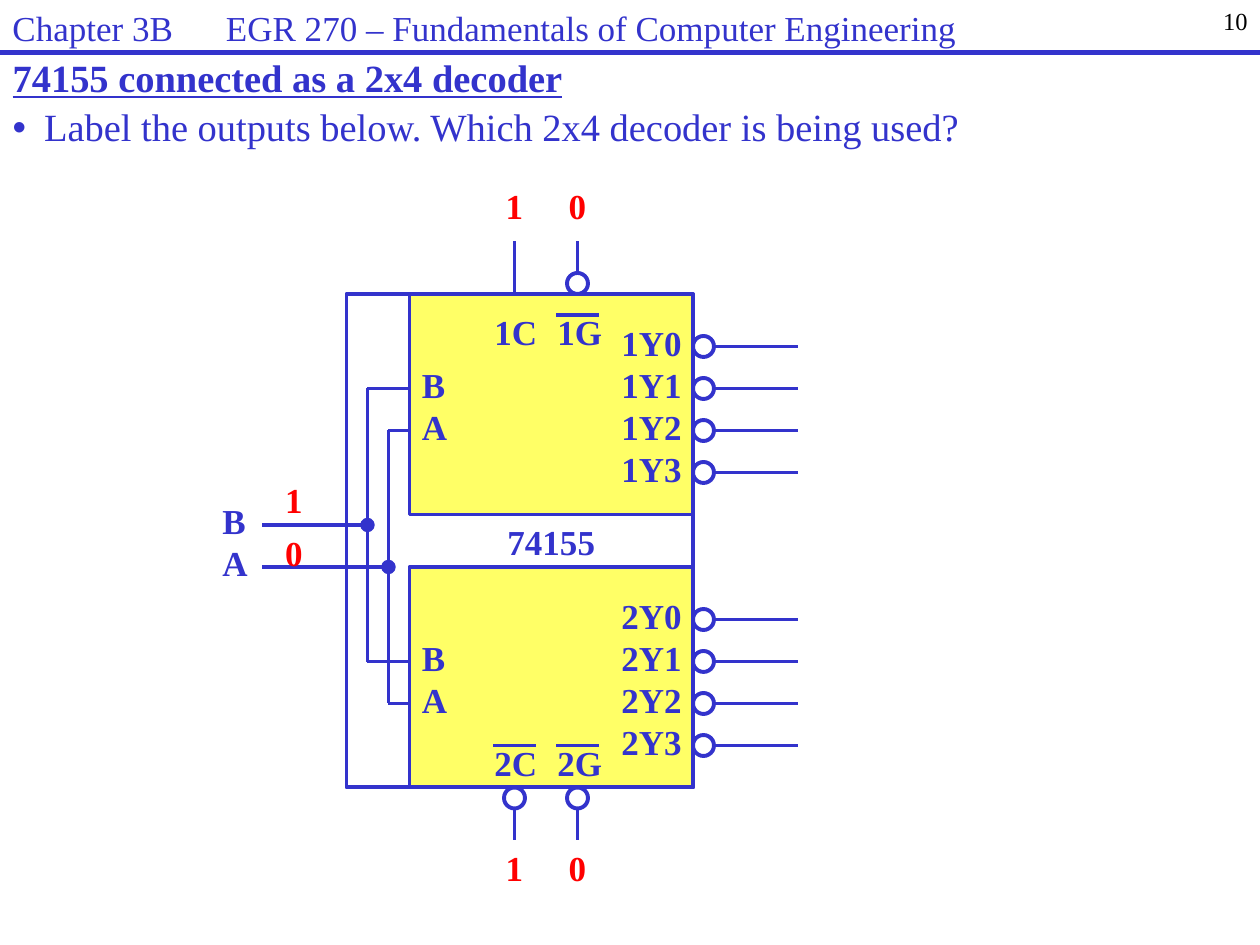
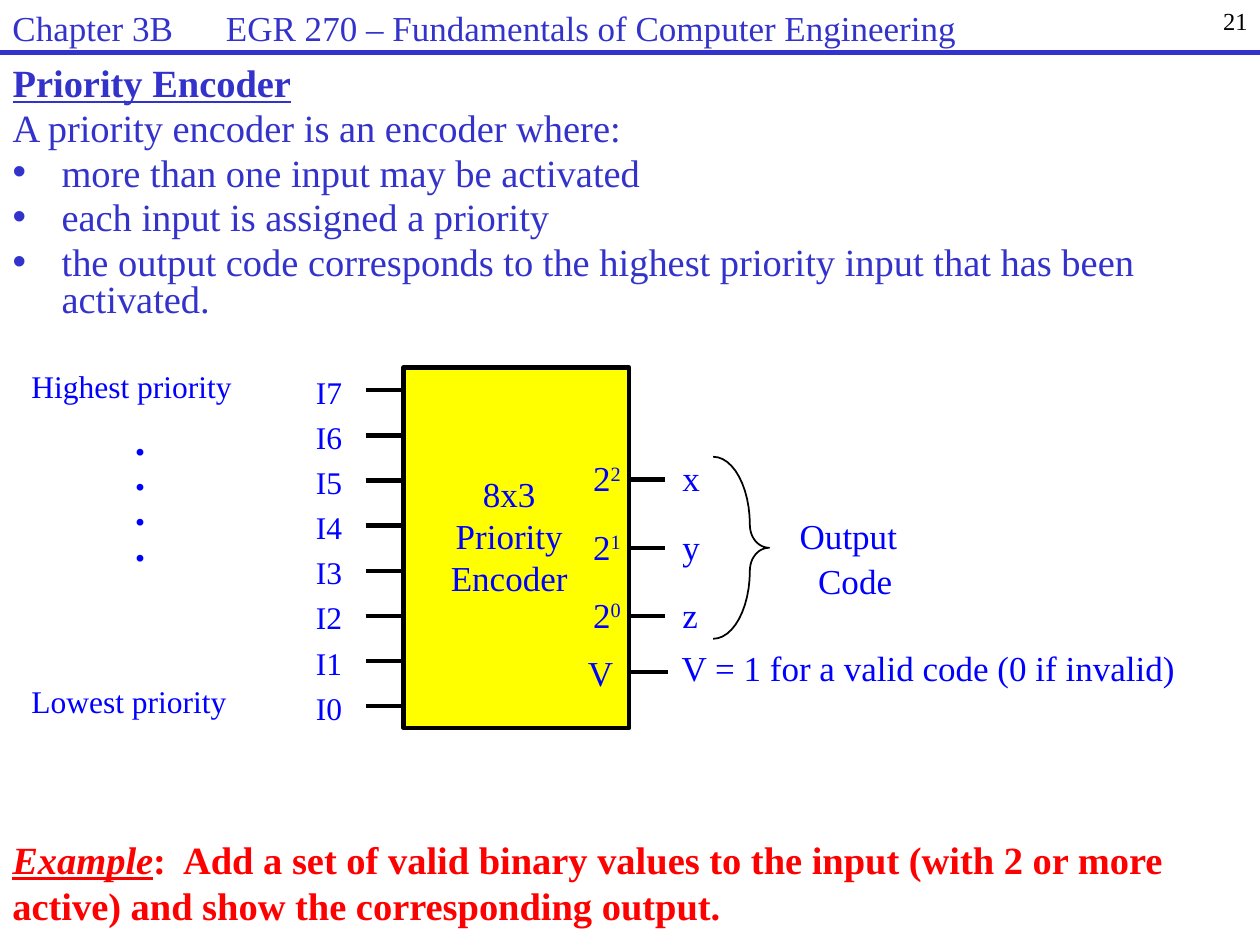
import math
import lxml.etree
import pptx
import pptx.dml.color
import pptx.enum.shapes
import pptx.enum.text
import pptx.oxml.ns
import pptx.util

Pt = pptx.util.Pt
KIND = pptx.enum.shapes.MSO_SHAPE
ALIGN = pptx.enum.text.PP_ALIGN
qn = pptx.oxml.ns.qn

FONT = "Times New Roman"
HUES = {"ink": "3333CC", "blue": "0000FF", "red": "FF0000", "black": "000000",
        "pale": "FFFF66", "gold": "FFFF00"}
HEAD = "Chapter 3B\tEGR 270 – Fundamentals of Computer Engineering"

# Pages: number, title, title line spacing, body top, body line spacing,
# hanging indent, and body lines as (bulleted, text)
DECODER = (10, "74155 connected as a 2x4 decoder", 0.9, 58.4, 0.9, 18,
           [(True, "Label the outputs below. Which 2x4 decoder is being used?")])
ENCODER = (21, "Priority Encoder", 1.0, 61, 0.8, 28,
           [(False, "A priority encoder is an encoder where:"),
            (True, "more than one input may be activated"),
            (True, "each input is assigned a priority"),
            (True, "the output code corresponds to the highest priority input "
                   "that has been activated.")])

# Decoder halves: number, top, top of control labels, barred controls
HALVES = [(1, 168, 174, "G"), (2, 324, 420, "CG")]
PINS = {"C": 294, "G": 330}
# Select inputs: name, spine x, input y, pin offset in each half, value, value top
INPUTS = [("B", 210, 300, 54, "1", 270), ("A", 222, 324, 78, "0", 300)]
# Control values: text, centre x, top
VALUES = [(v, x, y) for y in (102, 480) for v, x in zip("10", PINS.values())]

# Encoder outputs: power of two, name
OUTPUTS = [("2", "x"), ("1", "y"), ("0", "z")]
# Encoder captions: text, x, y, width, size
NOTES = [("Highest priority", 18, 210, 149, 18),
         ("Lowest priority", 18, 389.5, 149, 18),
         ("Output", 457, 294, 80, 20),
         ("Code", 467.5, 319.5, 70, 20),
         ("V", 336, 372, 22, 20),
         ("V = 1 for a valid code (0 if invalid)", 389.5, 369.5, 315, 20)]
TASK = ("Example", ":  Add a set of valid binary values to the input (with 2 or more "
        "active) and show the corresponding output.")


def tint(hue):
    return pptx.dml.color.RGBColor.from_string(HUES[hue])


def style(para, size, hue, bold=False, align=ALIGN.LEFT):
    para.alignment = align
    for run in para.runs:
        font = run.font
        font.name, font.size, font.bold = FONT, Pt(size), bold
        font.color.rgb = tint(hue)


def text(slide, words, x, y, w, h, size=20, hue="ink", bold=True,
         align=ALIGN.LEFT, inset=True):
    """Add a text box, one paragraph for each line of words."""
    frame = slide.shapes.add_textbox(Pt(x), Pt(y), Pt(w), Pt(h)).text_frame
    frame.word_wrap = True
    if not inset:
        frame.margin_left = frame.margin_right = 0
        frame.margin_top = frame.margin_bottom = 0
    frame.text = words
    for para in frame.paragraphs:
        style(para, size, hue, bold, align)
    return frame


def label(slide, words, x, y, w, size=20, align=ALIGN.LEFT):
    """Add a plain blue text box without insets."""
    return text(slide, words, x, y, w, size * 1.2, size, "blue", False, align, False)


def line(slide, x1, y1, x2, y2, hue="ink", width=2.25):
    link = slide.shapes.add_connector(pptx.enum.shapes.MSO_CONNECTOR.STRAIGHT,
                                      Pt(x1), Pt(y1), Pt(x2), Pt(y2))
    link.line.color.rgb = tint(hue)
    link.line.width = Pt(width)
    lxml.etree.SubElement(link._element.spPr, qn("a:effectLst"))
    return link


def paint(shape, fill=None, hue="ink", width=2.25):
    shape.shadow.inherit = False
    if fill:
        shape.fill.solid()
        shape.fill.fore_color.rgb = tint(fill)
    else:
        shape.fill.background()
    shape.line.color.rgb = tint(hue)
    shape.line.width = Pt(width)


def block(slide, x, y, w, h, *look):
    box = slide.shapes.add_shape(KIND.RECTANGLE, Pt(x), Pt(y), Pt(w), Pt(h))
    paint(box, *look)
    return box


def ring(slide, x, y, size=12, fill=None):
    """Add a circle centred on x, y."""
    dot = slide.shapes.add_shape(KIND.OVAL, Pt(x - size / 2), Pt(y - size / 2),
                                 Pt(size), Pt(size))
    paint(dot, fill)


def place(holder, x, y, w, h):
    holder.left, holder.top, holder.width, holder.height = Pt(x), Pt(y), Pt(w), Pt(h)
    frame = holder.text_frame
    frame.auto_size = pptx.enum.text.MSO_AUTO_SIZE.NONE
    frame.vertical_anchor = pptx.enum.text.MSO_ANCHOR.TOP
    frame.word_wrap = True
    return frame


def page(deck, number, title, lead, top, space, hang, items):
    """Add a slide with its running head, title and body list."""
    slide = deck.slides.add_slide(deck.slide_layouts[1])
    frame = place(slide.shapes.title, 0, 30.25, 720, 34)
    frame.text = title
    para = frame.paragraphs[0]
    style(para, 22, "ink", True)
    para.line_spacing = lead
    para.runs[0].font.underline = True

    frame = place(slide.placeholders[1], 0, top, 720, 26 * len(items) + 30)
    frame.text = "\n".join(words for _, words in items)
    for para, (dotted, _) in zip(frame.paragraphs, items):
        style(para, 22, "ink")
        para.line_spacing = space
        para.space_before, para.space_after = Pt(0), Pt(4.4)
        props = para._p.get_or_add_pPr()
        edge = hang if dotted else 0
        props.set("marL", str(Pt(edge)))
        props.set("indent", str(-Pt(edge)))
        if not dotted:
            lxml.etree.SubElement(props, qn("a:buNone"))

    head = text(slide, HEAD, 0, 0, 666, 30, bold=False)
    tabs = lxml.etree.SubElement(head.paragraphs[0]._p.get_or_add_pPr(), qn("a:tabLst"))
    lxml.etree.SubElement(tabs, qn("a:tab"), pos=str(Pt(122)), algn="l")
    text(slide, str(number), 672, 0, 48, 30, 14, "black", False, ALIGN.RIGHT)
    line(slide, 0, 30, 720, 30, width=3)
    return slide


def half(slide, num, top, ctrl, barred):
    """Draw one 2x4 decoder of the chip with its pins."""
    left, right, high = 234, 396, 126
    block(slide, left, top, right - left, high, "pale")
    for i in range(4):
        y = top + 30 + 24 * i
        ring(slide, right + 6, y)
        line(slide, right + 12, y, 456, y)
    text(slide, "\n".join(f"{num}Y{i}" for i in range(4)), 348, top + 12, 52, 104)
    text(slide, "B\nA", left, top + 36, 30, 55)
    way, edge = (-1, top) if num == 1 else (1, top + high)
    for name, x in PINS.items():
        text(slide, f"{num}{name}", x - 18.5, ctrl, 42, 32)
        start = edge
        if name in barred:
            line(slide, x - 12, ctrl + 6, x + 12, ctrl + 6)
            ring(slide, x, edge + way * 6)
            start = edge + way * 12
        line(slide, x, start, x, edge + way * 30)


def decoder(deck):
    slide = page(deck, *DECODER)
    block(slide, 198, 168, 198, 282)
    for part in HALVES:
        half(slide, *part)
    for name, x, y, drop, value, high in INPUTS:
        line(slide, 150, y, x, y)
        ends = [top + drop for _, top, _, _ in HALVES]
        line(slide, x, ends[0], x, ends[1])
        for end in ends:
            line(slide, x, end, 234, end)
        ring(slide, x, y, 6, "ink")
        text(slide, name, 120, y - 18, 30, 32)
        text(slide, value, 150, high, 36, 32, hue="red", align=ALIGN.CENTER)
    text(slide, "74155", 234, 294, 162, 32, align=ALIGN.CENTER)
    for value, x, y in VALUES:
        text(slide, value, x - 18, y, 36, 32, hue="red", align=ALIGN.CENTER)


def brace(slide, x, mid):
    """Draw a right brace from two quarter ellipses, mirrored about mid."""
    turns = [math.pi / 2 * i / 12 for i in range(13)]
    dots = [(x + 21 * math.sin(a), mid - 13 - 39 * math.cos(a)) for a in turns]
    dots += [(x + 32 - 11 * math.cos(a), mid - 13 + 13 * math.sin(a)) for a in turns]
    dots += [(px, 2 * mid - py) for px, py in reversed(dots)]
    dots = [(Pt(px), Pt(py)) for px, py in dots]
    pen = slide.shapes.build_freeform(*dots[0])
    pen.add_line_segments(dots[1:], close=False)
    paint(pen.convert_to_shape(), None, "black", 1)


def encoder(deck):
    slide = page(deck, *ENCODER)
    left, right, mid = 230.5, 359.5, 313
    box = block(slide, left, mid - 103, right - left, 206, "gold", "black", 2.5)
    for i in range(8):
        y = 223 + 25.8 * i
        line(slide, 209, y, left, y, "black", 2.5)
        label(slide, f"I{7 - i}", 180.5, y - 10, 26, 18)
    for i, (power, name) in enumerate(OUTPUTS):
        y = mid + 39 * (i - 1)
        link = line(slide, 380, y, right, y, "black", 2.5)
        if y == mid:
            link.end_connect(box, 3)
        para = label(slide, "2", 339, y - 13, 22).paragraphs[0]
        para.add_run().text = power
        style(para, 20, "blue")
        para.runs[1]._r.get_or_add_rPr().set("baseline", "30000")
        label(slide, name, 390, y - 13, 16)
    line(slide, 381.5, 384, right, 384, "black", 2.5)
    brace(slide, 407.5, mid)
    label(slide, "8x3\nPriority\nEncoder", 251, 270, 80, align=ALIGN.CENTER)
    for words, x, y, w, size in NOTES:
        label(slide, words, x, y, w, size)
    dots = text(slide, "\n".join("...."), 70, 240.5, 28, 145, 24, "blue")
    for para in dots.paragraphs:
        para.line_spacing = 0.7

    para = text(slide, TASK[0], 0, 474, 720, 66, 22, "red").paragraphs[0]
    para.add_run().text = TASK[1]
    style(para, 22, "red", True)
    first = para.runs[0].font
    first.italic = first.underline = True


def main():
    deck = pptx.Presentation()
    deck.slide_width, deck.slide_height = Pt(720), Pt(540)
    decoder(deck)
    encoder(deck)
    deck.save("out.pptx")


if __name__ == "__main__":
    main()
